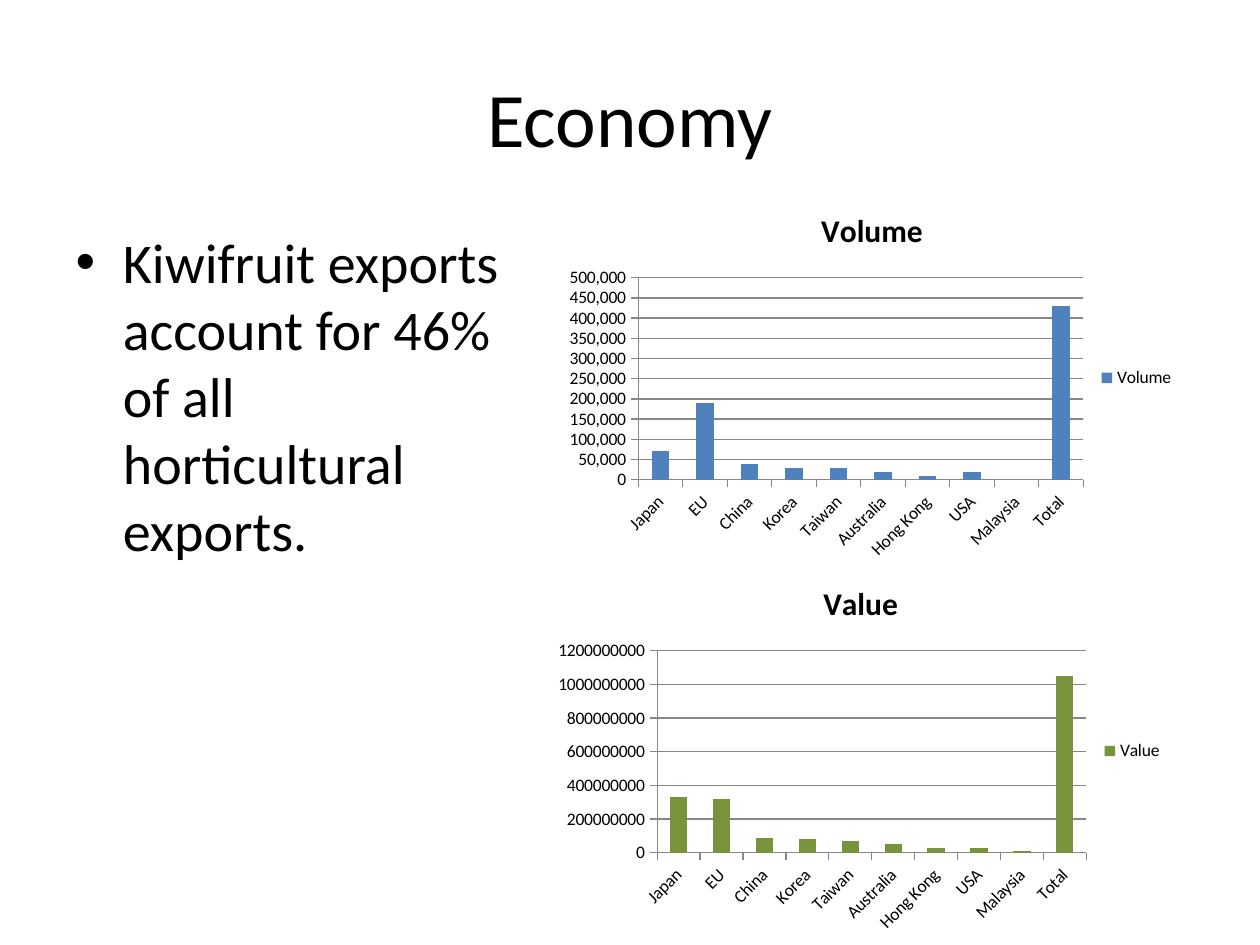
from dataclasses import dataclass

import pptx
import pptx.chart.data
import pptx.dml.color
import pptx.enum.chart
import pptx.enum.text
import pptx.util
from pptx.util import Cm


@dataclass(frozen=True)
class Theme:
    font: str = "Calibri"
    text: str = "000000"
    axis: str = "878787"
    volume: str = "4F81BD"
    value: str = "77933C"
    title_size: int = 44
    body_size: int = 32
    chart_title_size: int = 18
    chart_size: int = 10


THEME = Theme()

MARKETS = ["Japan", "EU", "China", "Korea", "Taiwan", "Australia",
           "Hong Kong", "USA", "Malaysia", "Total"]
VOLUMES = [70000, 190000, 40000, 30000, 30000, 20000, 10000, 20000, 0, 430000]
VALUES = [330000000, 320000000, 90000000, 80000000, 70000000,
          50000000, 30000000, 30000000, 10000000, 1050000000]


def rgb(color):
    return pptx.dml.color.RGBColor.from_string(color)


def style_font(font, size, bold=False):
    font.name = THEME.font
    font.size = pptx.util.Pt(size)
    font.bold = bold
    font.color.rgb = rgb(THEME.text)


def fill_placeholder(placeholder, text, box, size, align, anchor):
    placeholder.left, placeholder.top, placeholder.width, placeholder.height = box
    frame = placeholder.text_frame
    frame.text = text
    frame.vertical_anchor = anchor
    paragraph = frame.paragraphs[0]
    paragraph.alignment = align
    style_font(paragraph.font, size)


def style_axis(axis):
    axis.major_tick_mark = pptx.enum.chart.XL_TICK_MARK.OUTSIDE
    axis.minor_tick_mark = pptx.enum.chart.XL_TICK_MARK.NONE
    axis.format.line.color.rgb = rgb(THEME.axis)


def add_market_chart(slide, name, amounts, box, color, number_format):
    data = pptx.chart.data.CategoryChartData(number_format=number_format)
    data.categories = MARKETS
    data.add_series(name, amounts)
    chart = slide.shapes.add_chart(
        pptx.enum.chart.XL_CHART_TYPE.COLUMN_CLUSTERED, *box, data).chart
    style_font(chart.font, THEME.chart_size)

    # Heading and legend
    chart.has_title = True
    chart.chart_title.include_in_layout = False
    heading = chart.chart_title.text_frame
    heading.text = name
    style_font(heading.paragraphs[0].font, THEME.chart_title_size, bold=True)
    chart.has_legend = True
    chart.legend.position = pptx.enum.chart.XL_LEGEND_POSITION.RIGHT
    chart.legend.include_in_layout = False

    # Axes and gridlines
    style_axis(chart.category_axis)
    style_axis(chart.value_axis)
    chart.value_axis.has_major_gridlines = True
    chart.value_axis.major_gridlines.format.line.color.rgb = rgb(THEME.axis)

    # Columns
    plot = chart.plots[0]
    plot.gap_width = 150
    plot.vary_by_categories = False
    columns = plot.series[0].format.fill
    columns.solid()
    columns.fore_color.rgb = rgb(color)


def main():
    presentation = pptx.Presentation()
    presentation.slide_width, presentation.slide_height = Cm(25.4), Cm(19.05)
    slide = presentation.slides.add_slide(presentation.slide_layouts[1])

    # Title and key point
    align, anchor = pptx.enum.text.PP_ALIGN, pptx.enum.text.MSO_ANCHOR
    fill_placeholder(slide.shapes.title, "Economy",
                     (Cm(1.27), Cm(0.76), Cm(22.86), Cm(3.18)),
                     THEME.title_size, align.CENTER, anchor.MIDDLE)
    fill_placeholder(slide.placeholders[1],
                     "Kiwifruit exports account for 46% of all horticultural exports.",
                     (Cm(1.27), Cm(4.45), Cm(9.53), Cm(12.57)),
                     THEME.body_size, align.LEFT, anchor.TOP)

    # Export volume above export value
    chart_size = Cm(12.7), Cm(7.62)
    add_market_chart(slide, "Volume", VOLUMES, (Cm(11.23), Cm(3.81), *chart_size),
                     THEME.volume, "#,##0")
    add_market_chart(slide, "Value", VALUES, (Cm(11), Cm(11.33), *chart_size),
                     THEME.value, "General")

    presentation.save("out.pptx")


if __name__ == "__main__":
    main()
